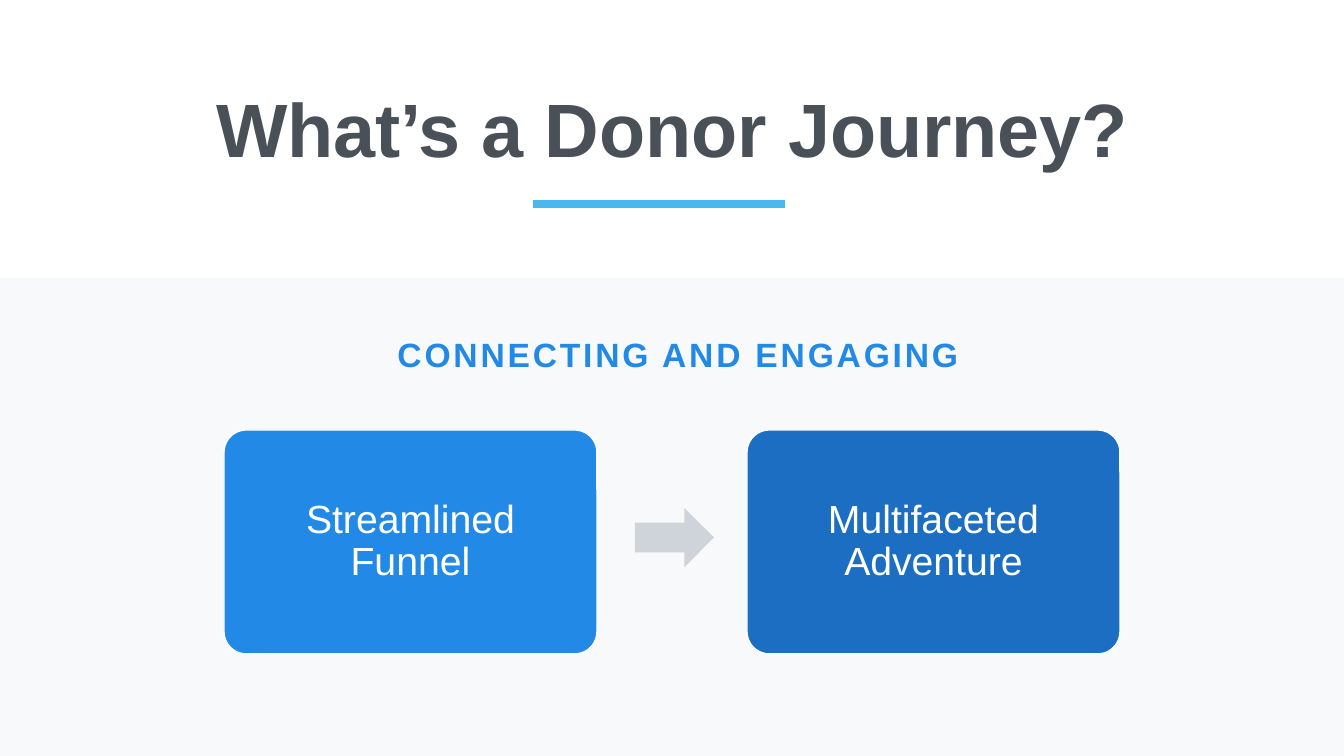
from lxml import etree
from pptx import Presentation
from pptx.dml.color import RGBColor
from pptx.enum.shapes import MSO_CONNECTOR, MSO_SHAPE
from pptx.enum.text import MSO_ANCHOR, PP_ALIGN
from pptx.oxml.ns import qn
from pptx.util import Pt

PX = 9071.43  # EMU per px, at 100.8 px to the inch
RECTANGLE = MSO_SHAPE.RECTANGLE
ROUNDED = MSO_SHAPE.ROUNDED_RECTANGLE
RIGHT_ARROW = MSO_SHAPE.RIGHT_ARROW
STRAIGHT = MSO_CONNECTOR.STRAIGHT
MIDDLE = MSO_ANCHOR.MIDDLE
CENTER = PP_ALIGN.CENTER

WHITE = RGBColor(0xFF, 0xFF, 0xFF)
PALE_GRAY = RGBColor(0xF8, 0xF9, 0xFA)
ARROW_GRAY = RGBColor(0xCE, 0xD4, 0xDA)
DARK_GRAY = RGBColor(0x49, 0x50, 0x57)
SKY_BLUE = RGBColor(0x4B, 0xB7, 0xEF)
BLUE = RGBColor(0x22, 0x8A, 0xE6)
DEEP_BLUE = RGBColor(0x1B, 0x6E, 0xC2)


def add_filled_shape(kind, box, color):
    shape = slide.shapes.add_shape(kind, *(round(v * PX) for v in box))
    shape.shadow.inherit = False
    shape.fill.solid()
    shape.fill.fore_color.rgb = color
    shape.line.fill.background()
    return shape


def write_centered(shape, text, size, color, bold=False, line_spacing=1.0):
    """Write one centred paragraph into the shape and return its run."""
    frame = shape.text_frame
    frame.word_wrap = True
    frame.vertical_anchor = MIDDLE
    paragraph = frame.paragraphs[0]
    paragraph.alignment = CENTER
    paragraph.line_spacing = line_spacing
    run = paragraph.add_run()
    run.text = text
    run.font.name = "Arial"
    run.font.size = Pt(size)
    run.font.bold = bold
    run.font.color.rgb = color
    return run


presentation = Presentation()
presentation.slide_width = round(1344 * PX)
presentation.slide_height = round(756 * PX)
slide = presentation.slides.add_slide(presentation.slide_layouts[6])

add_filled_shape(RECTANGLE, (0, 278, 1344, 478), PALE_GRAY)

# Heading, underline and subheading
title = slide.shapes.add_textbox(*(round(v * PX) for v in (93, 60, 1159, 146)))
write_centered(title, "What’s a Donor Journey?", 54, DARK_GRAY, True, 0.9)

underline = slide.shapes.add_connector(
    STRAIGHT, *(round(v * PX) for v in (533, 204, 785, 204)))
underline.line.color.rgb = SKY_BLUE
underline.line.width = Pt(6)
etree.SubElement(underline._element.spPr, qn("a:effectLst"))

subheading = slide.shapes.add_textbox(
    *(round(v * PX) for v in (125, 331, 1106, 47)))
subheading_run = write_centered(
    subheading, "CONNECTING AND ENGAGING", 24, BLUE, True)
subheading_run.font._element.set("spc", "200")

# Two cards joined by an arrow
cards = [("Streamlined Funnel", BLUE), ("Multifaceted Adventure", DEEP_BLUE)]
for index, (label, color) in enumerate(cards):
    card = add_filled_shape(ROUNDED, (224 + index * 523, 430, 373, 224), color)
    card.adjustments[0] = 0.1
    card.line.color.rgb = WHITE
    card.line.width = Pt(1)
    card.text_frame.margin_left = card.text_frame.margin_right = round(24 * PX)
    write_centered(card, label, 28, WHITE, line_spacing=0.9)

add_filled_shape(RIGHT_ARROW, (635, 508, 79, 59), ARROW_GRAY)

presentation.save("out.pptx")
